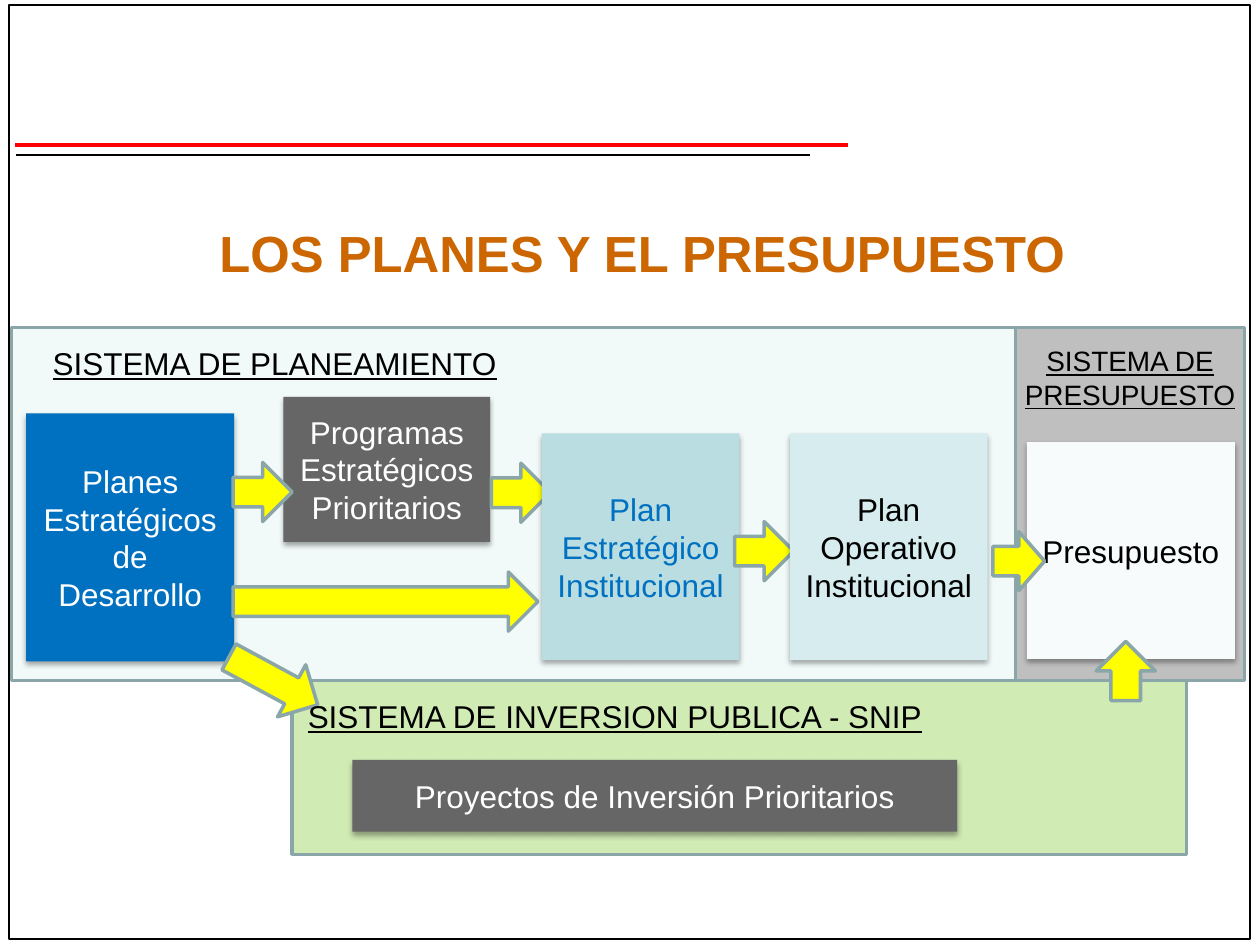
"""Draw the slide on plans and the budget."""
from dataclasses import dataclass

from lxml.etree import SubElement
from pptx import Presentation
from pptx.dml.color import RGBColor as Rgb
from pptx.enum.shapes import MSO_CONNECTOR as Conn, MSO_SHAPE as Kind
from pptx.enum.text import MSO_ANCHOR as Anchor, MSO_AUTO_SIZE as Fit, PP_ALIGN as Align
from pptx.oxml.ns import qn
from pptx.util import Pt


@dataclass(frozen=True)
class Theme:
    """Hold the colours, type sizes and font."""
    font: str = "Arial"
    black: str = "000000"
    white: str = "FFFFFF"
    red: str = "FF0000"
    title: str = "CC6600"
    blue: str = "0070C0"
    gray: str = "666666"
    edge: str = "8AA6A8"
    arrow: str = "FFFF00"
    plan: str = "F1F9F9"
    budget: str = "BFBFBF"
    invest: str = "92D050"
    teal: str = "BADDE1"
    pale: str = "D6ECEE"
    ice: str = "F8FBFC"
    head: int = 29
    body: int = 18
    small: int = 16


T = Theme()


def write(frame, text, color=T.black, size=T.body, bold=False, line=False,
          align=Align.CENTER, anchor=Anchor.MIDDLE, side=7.2):
    """Put formatted text in a frame."""
    frame.word_wrap = True
    frame.auto_size = Fit.NONE
    frame.vertical_anchor = anchor
    frame.margin_left = frame.margin_right = Pt(side)
    frame.margin_top = frame.margin_bottom = Pt(3.6)
    para = frame.paragraphs[0]
    para.alignment = align
    run = para.add_run()
    run.text = text
    font = run.font
    font.name, font.size = T.font, Pt(size)
    font.bold, font.underline = bold, line
    font.color.rgb = Rgb.from_string(color)


def shape(slide, area, fill=None, edge=None, width=2, kind=Kind.RECTANGLE):
    """Add a flat shape with an optional fill and edge."""
    item = slide.shapes.add_shape(kind, *map(Pt, area))
    item.shadow.inherit = False
    if fill:
        item.fill.solid()
        item.fill.fore_color.rgb = Rgb.from_string(fill)
    else:
        item.fill.background()
    if edge:
        item.line.color.rgb = Rgb.from_string(edge)
        item.line.width = Pt(width)
    else:
        item.line.fill.background()
    return item


def rule(slide, left, right, top, color, width):
    """Draw a level line."""
    item = slide.shapes.add_connector(Conn.STRAIGHT, Pt(left), Pt(top), Pt(right), Pt(top))
    item.line.color.rgb = Rgb.from_string(color)
    item.line.width = Pt(width)
    SubElement(item._element.spPr, qn("a:effectLst"))


def fade(item, share):
    """Make a solid fill partly clear."""
    tint = item._element.spPr.find(qn("a:solidFill"))[0]
    SubElement(tint, qn("a:alpha"), val=str(share * 1000))


def card(slide, text, area, fill, color):
    """Add a box with text and a soft shadow."""
    item = shape(slide, area, fill)
    glow = SubElement(item._element.spPr.find(qn("a:effectLst")), qn("a:outerShdw"),
                      blurRad=str(Pt(3.1)), dist=str(Pt(1.8)), dir="5400000", rotWithShape="0")
    tint = SubElement(glow, qn("a:srgbClr"), val=T.black)
    SubElement(tint, qn("a:alpha"), val="35000")
    write(item.text_frame, text, color=color)


def arrow(slide, left, top, width=33.8, turn=0):
    """Add a yellow block arrow."""
    item = shape(slide, (left, top, width, 33.8), T.arrow, T.edge, kind=Kind.RIGHT_ARROW)
    item.rotation = turn


def label(slide, text, area, **form):
    """Add an underlined system name."""
    box = slide.shapes.add_textbox(*map(Pt, area))
    write(box.text_frame, text, line=True, anchor=Anchor.TOP, **form)


def title(slide, text, area):
    """Place and fill the title."""
    item = slide.shapes.title
    item.left, item.top, item.width, item.height = map(Pt, area)
    write(item.text_frame, text, color=T.title, size=T.head, bold=True)


def main():
    """Build and save the slide."""
    deck = Presentation()
    deck.slide_width, deck.slide_height = Pt(720), Pt(540)
    slide = deck.slides.add_slide(deck.slide_layouts[5])

    shape(slide, (5, 3, 709.2, 533.5), edge=T.black, width=1)
    rule(slide, 8.6, 484.6, 82.8, T.red, 2.25)
    rule(slide, 9.4, 463, 88.6, T.black, 1)
    title(slide, "LOS PLANES Y EL PRESUPUESTO", (43.2, 118.1, 648, 51.8))

    fade(shape(slide, (167, 388.8, 511.2, 99.4), T.invest, T.edge), 42)
    shape(slide, (580.3, 187.2, 131, 201.6), T.budget, T.edge)
    shape(slide, (6.5, 187.2, 573.8, 201.6), T.plan, T.edge)

    card(slide, "Planes Estratégicos de Desarrollo", (15, 236.2, 118.8, 141.8), T.blue, T.white)
    card(slide, "Presupuesto", (586.8, 252.7, 118.8, 123.8), T.ice, T.black)
    card(slide, "Proyectos de Inversión Prioritarios", (201.4, 434.2, 345.6, 41), T.gray, T.white)
    card(slide, "Programas Estratégicos Prioritarios", (162, 226.8, 118.1, 82.8), T.gray, T.white)

    arrow(slide, 133.2, 264.3)
    arrow(slide, 127.4, 372.2, width=57.6, turn=28.4)
    arrow(slide, 280.8, 264.7)
    arrow(slide, 626.4, 366.5, turn=270)
    arrow(slide, 133.2, 326.9, width=174.2)

    card(slide, "Plan Estratégico Institucional", (309.6, 247.7, 113, 129.6), T.teal, T.blue)
    arrow(slide, 419.8, 298.1)
    card(slide, "Plan Operativo Institucional", (451.4, 247.7, 113, 129.6), T.pale, T.black)
    arrow(slide, 567.4, 303.8, width=29.5)

    label(slide, "SISTEMA DE PLANEAMIENTO", (23, 193, 292.3, 28.8), align=Align.LEFT)
    label(slide, "SISTEMA DE PRESUPUESTO", (580.3, 193, 131, 46.1), size=T.small, side=2.9)
    label(slide, "SISTEMA DE INVERSION PUBLICA - SNIP", (161.3, 394.6, 380.2, 28.8))

    deck.save("out.pptx")


if __name__ == "__main__":
    main()
